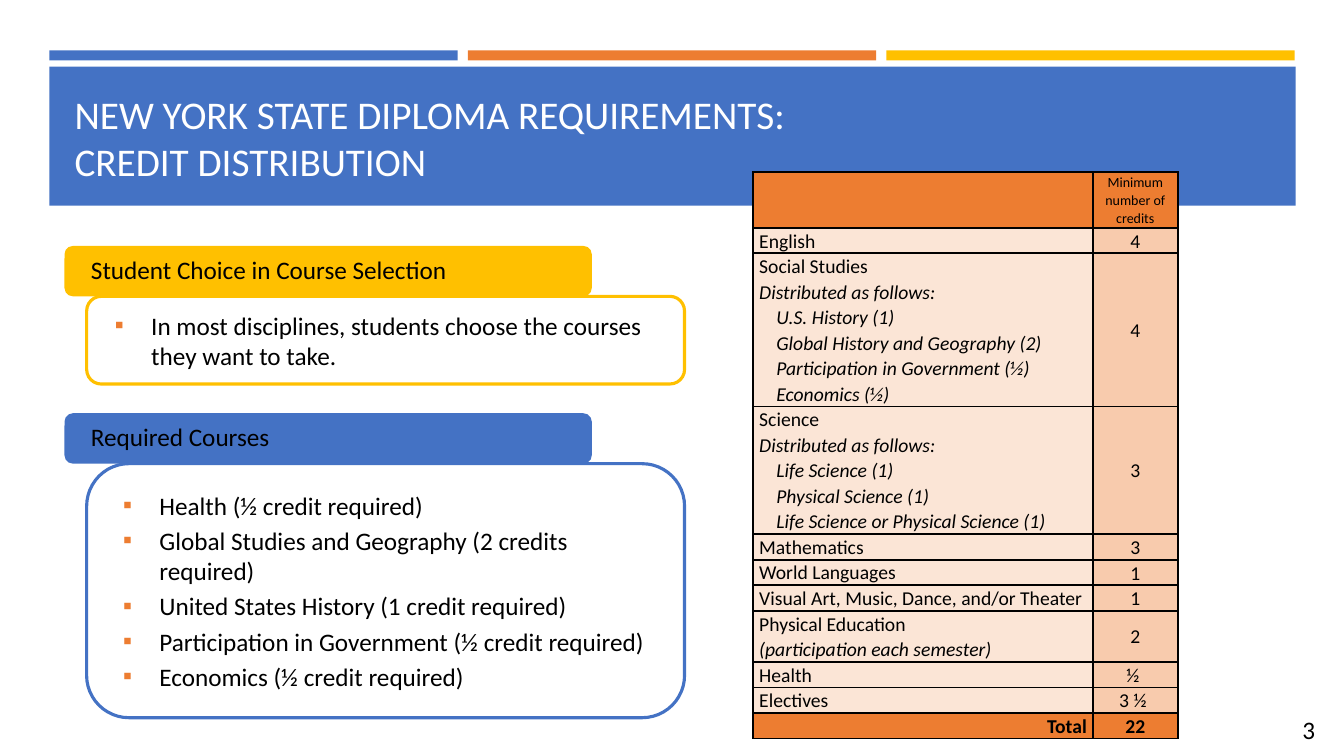
from lxml import etree
from pptx import Presentation
from pptx import util as u
from pptx.dml.color import RGBColor
from pptx.enum import shapes, text
from pptx.oxml.ns import qn

HUE = dict(blue="4472C4", orange="ED7D31", gold="FFC000", pale="FBE5D6",
           peach="F8CBAD", black="000000", white="FFFFFF")
RGB = {name: RGBColor.from_string(code) for name, code in HUE.items()}
LEFT, RIGHT = 0.49, 12.85
GAP = 0.1
BAR = 4.05

deck = Presentation()
deck.slide_width, deck.slide_height = u.Inches(13.33), u.Inches(7.5)
slide = deck.slides.add_slide(deck.slide_layouts[5])


def block(kind, x, y, w, h, fill=None, line=None):
    box = slide.shapes.add_shape(kind, *map(u.Inches, (x, y, w, h)))
    box.shadow.inherit = False
    if fill:
        box.fill.solid()
        box.fill.fore_color.rgb = RGB[fill]
    else:
        box.fill.background()
    if line:
        box.line.color.rgb = RGB[line]
        box.line.width = u.Pt(2.25)
    else:
        box.line.fill.background()
    return box


def style(para, size, hue="black", align=text.PP_ALIGN.LEFT, space=1.0, indent=0):
    para.alignment = align
    para.line_spacing = space
    if indent:
        para._p.get_or_add_pPr().set("marL", str(u.Inches(indent)))
    for run in para.runs:
        run.font.name = "Calibri"
        run.font.size = u.Pt(size)
        run.font.color.rgb = RGB[hue]


# Banner
for i, hue in enumerate(("blue", "orange", "gold")):
    block(shapes.MSO_SHAPE.RECTANGLE, LEFT + i * (BAR + GAP), 0.5, BAR, 0.1, hue)
block(shapes.MSO_SHAPE.RECTANGLE, LEFT, 0.66, RIGHT - LEFT, 1.38, "blue")

title = slide.shapes.title
title.left, title.top, title.width, title.height = map(u.Inches, (0.64, 0.8, 12.06, 1.08))
slide.shapes._spTree.append(title._element)
frame = title.text_frame
frame.text = "NEW YORK STATE DIPLOMA REQUIREMENTS:\vCREDIT DISTRIBUTION"
frame.auto_size = text.MSO_AUTO_SIZE.NONE
frame.vertical_anchor = text.MSO_ANCHOR.BOTTOM
style(frame.paragraphs[0], 28, "white")

# Two cards, each with a coloured tab above it
CARDS = [
    ("Student Choice in Course Selection", "gold", 2.44, 0.87,
     ["In most disciplines, students choose the courses they want to take."]),
    ("Required Courses", "blue", 4.1, 2.52,
     ["Health (½ credit required)",
      "Global Studies and Geography (2 credits required)",
      "United States History (1 credit required)",
      "Participation in Government (½ credit required)",
      "Economics (½ credit required)"]),
]
TAB = 0.5
for head, hue, top, high, items in CARDS:
    tab = block(shapes.MSO_SHAPE.ROUNDED_RECTANGLE, 0.64, top, 5.23, TAB, hue)
    tab.text_frame.text = head
    style(tab.text_frame.paragraphs[0], 18, space=0.9, indent=0.14)

    card = block(shapes.MSO_SHAPE.ROUNDED_RECTANGLE, 0.86, top + TAB, 5.93, high, line=hue)
    card.text_frame.text = "\n".join(items)
    for i, para in enumerate(card.text_frame.paragraphs):
        style(para, 18, indent=0.5)
        if i:
            para.space_before = u.Pt(3.6)
        props = para._p.get_or_add_pPr()
        props.set("indent", str(u.Inches(-0.36)))
        tint = etree.SubElement(props, qn("a:buClr"))
        etree.SubElement(tint, qn("a:srgbClr"), val=HUE["orange"])
        etree.SubElement(props, qn("a:buFont"), typeface="Calibri")
        etree.SubElement(props, qn("a:buChar"), char="▪")

# Credit table: subject, credits, italic notes, indented italic courses
SPLIT = "Distributed as follows:"
ROWS = [
    ("", "Minimum number of credits", [], []),
    ("English", "4", [], []),
    ("Social Studies", "4", [SPLIT],
     ["U.S. History (1)", "Global History and Geography (2)",
      "Participation in Government (½)", "Economics (½)"]),
    ("Science", "3", [SPLIT],
     ["Life Science (1)", "Physical Science (1)", "Life Science or Physical Science (1)"]),
    ("Mathematics", "3", [], []),
    ("World Languages", "1", [], []),
    ("Visual Art, Music, Dance, and/or Theater", "1", [], []),
    ("Physical Education", "2", ["(participation each semester)"], []),
    ("Health", "½ ", [], []),
    ("Electives", "3 ½ ", [], []),
    ("Total", "22", [], []),
]
LINE = 0.25
LAST = len(ROWS) - 1
grid = slide.shapes.add_table(len(ROWS), 2, *map(u.Inches, (7.47, 1.71, 4.21, 5.4))).table
for col, wide in zip(grid.columns, (3.37, 0.84)):
    col.width = u.Inches(wide)

for r, (name, count, notes, parts) in enumerate(ROWS):
    lines = [name, *notes, *parts]
    grid.rows[r].height = u.Inches(LINE * len(lines) if r else 0.55)
    for c, words in enumerate(("\n".join(lines), count)):
        cell = grid.cell(r, c)
        cell.text = words
        cell.margin_left = cell.margin_right = u.Inches(0.06)
        cell.margin_top = cell.margin_bottom = 0
        cell.vertical_anchor = text.MSO_ANCHOR.MIDDLE if c else text.MSO_ANCHOR.TOP
        if c:
            align = text.PP_ALIGN.CENTER
        else:
            align = text.PP_ALIGN.RIGHT if r == LAST else text.PP_ALIGN.LEFT
        for i, para in enumerate(cell.text_frame.paragraphs):
            style(para, 14 if r else 10, align=align, space=1.07,
                  indent=0.17 if i > len(notes) else 0)
            para.font.bold = r == LAST
            for run in para.runs:
                run.font.bold = r == LAST
                run.font.italic = i > 0
        props = cell._tc.get_or_add_tcPr()
        for side in "LRTB":
            edge = etree.SubElement(props, qn("a:ln" + side), w=str(u.Pt(1.5)))
            ink = etree.SubElement(edge, qn("a:solidFill"))
            etree.SubElement(ink, qn("a:srgbClr"), val=HUE["black"])
        cell.fill.solid()
        cell.fill.fore_color.rgb = RGB["orange" if r in (0, LAST) else ("pale", "peach")[c]]

# Page number
page = slide.shapes.add_textbox(*map(u.Inches, (12.63, 7.04, 0.7, 0.4))).text_frame
page.word_wrap = True
page.text = "3"
style(page.paragraphs[0], 18, align=text.PP_ALIGN.CENTER)

deck.save("out.pptx")
